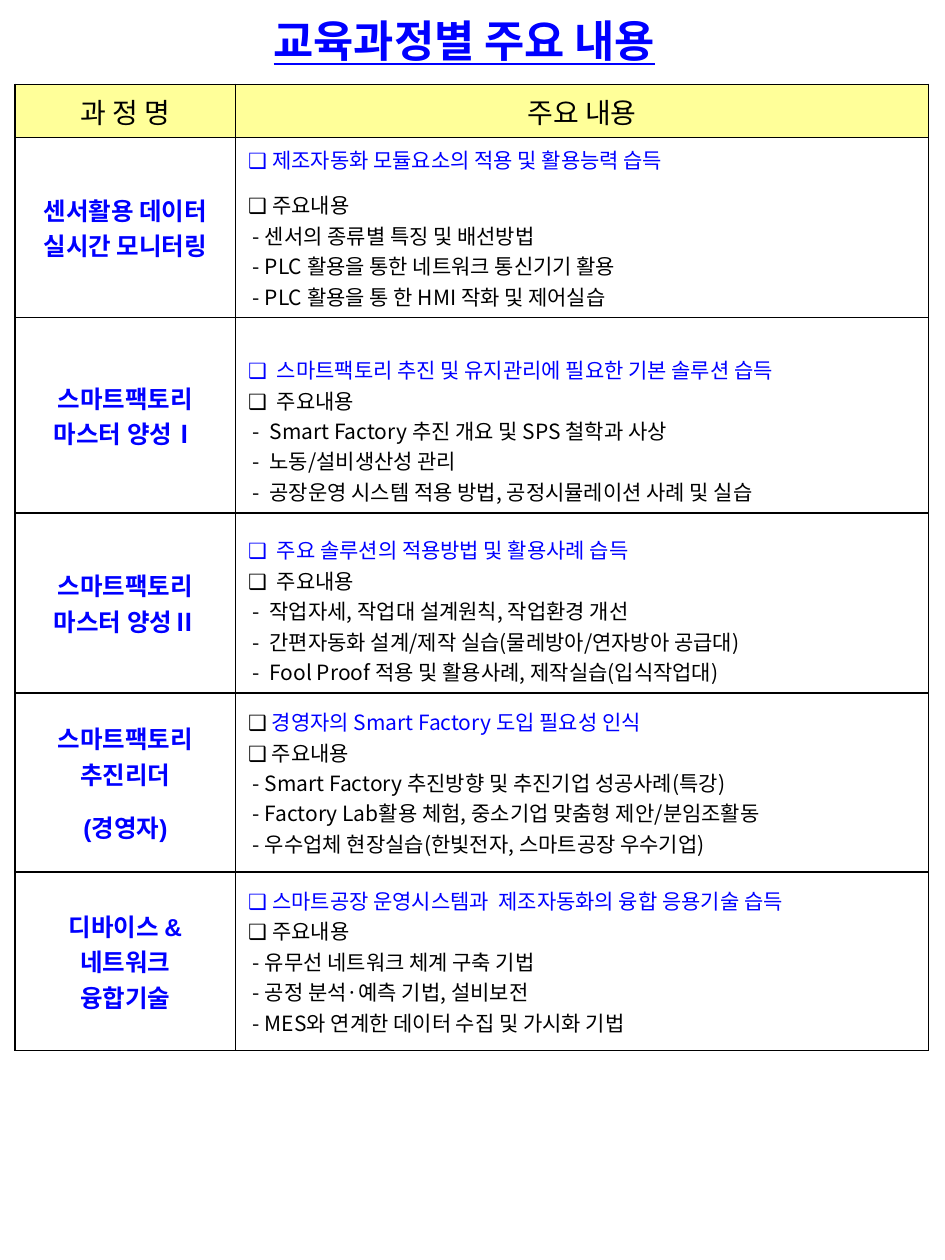
from lxml import etree
from pptx import Presentation
from pptx.dml.color import RGBColor
from pptx.enum.text import MSO_ANCHOR, MSO_AUTO_SIZE, PP_ALIGN
from pptx.oxml.ns import qn
from pptx.util import Inches, Pt

CENTER, LEFT = PP_ALIGN.CENTER, PP_ALIGN.LEFT
TOP, MIDDLE = MSO_ANCHOR.TOP, MSO_ANCHOR.MIDDLE
GROW = MSO_AUTO_SIZE.SHAPE_TO_FIT_TEXT

KOREAN, LATIN = "Noto Sans CJK KR", "Arial"
BLUE, BLACK = "0000FF", "000000"
THEME = {
    "title": {"name": KOREAN, "size": Pt(25), "bold": True, "underline": True, "color": BLUE},
    "header": {"name": KOREAN, "size": Pt(16), "bold": False, "color": BLACK},
    "course": {"size": Pt(14), "bold": True, "color": BLUE},
    "goal": {"name": KOREAN, "size": Pt(12), "bold": False, "color": BLUE},
    "body": {"name": KOREAN, "size": Pt(12), "bold": False, "color": BLACK},
    "header_fill": "FFFF99",
    "border": BLACK,
}

HEADERS = ["과 정 명", "주요 내용"]
CONTENTS = "주요내용"
BOX = "❑"
COURSES = [
    {"name": ["센서활용 데이터", "실시간 모니터링"], "font": LATIN, "height": 1.43,
     "goal": "제조자동화 모듈요소의 적용 및 활용능력 습득", "contents_spacing": 1.5,
     "topics": [" - 센서의 종류별 특징 및 배선방법",
                " - PLC 활용을 통한 네트워크 통신기기 활용",
                " - PLC 활용을 통 한 HMI 작화 및 제어실습"]},
    {"name": ["스마트팩토리", "마스터 양성Ⅰ"], "font": KOREAN, "height": 1.55,
     "goal": " 스마트팩토리 추진 및 유지관리에 필요한 기본 솔루션 습득",
     "goal_spacing": 2.0, "lead": " ",
     "topics": [" -  Smart Factory 추진 개요 및 SPS 철학과 사상",
                " -  노동/설비생산성 관리",
                " -  공장운영 시스템 적용 방법, 공정시뮬레이션 사례 및 실습"]},
    {"name": ["스마트팩토리", "마스터 양성Ⅱ"], "font": KOREAN, "height": 1.43,
     "goal": " 주요 솔루션의 적용방법 및 활용사례 습득",
     "goal_spacing": 1.5, "lead": " ",
     "topics": [" -  작업자세, 작업대 설계원칙, 작업환경 개선",
                " -  간편자동화 설계/제작 실습(물레방아/연자방아 공급대)",
                " -  Fool Proof 적용 및 활용사례, 제작실습(입식작업대)"]},
    {"name": ["스마트팩토리", "추진리더", "(경영자)"], "font": LATIN, "height": 1.42,
     "last_name_spacing": 1.5, "typed_box": True,
     "goal": "경영자의 Smart Factory 도입 필요성 인식",
     "topics": [" - Smart Factory 추진방향 및 추진기업 성공사례(특강)",
                " - Factory Lab활용 체험, 중소기업 맞춤형 제안/분임조활동",
                " - 우수업체 현장실습(한빛전자, 스마트공장 우수기업)"]},
    {"name": ["디바이스 &", "네트워크", "융합기술"], "font": LATIN, "height": 1.42,
     "goal": "스마트공장 운영시스템과  제조자동화의 융합 응용기술 습득",
     "topics": [" - 유무선 네트워크 체계 구축 기법",
                " - 공정 분석·예측 기법, 설비보전",
                " - MES와 연계한 데이터 수집 및 가시화 기법"]},
]
COLUMN_WIDTHS = [1.75, 5.5]
HEADER_HEIGHT = 0.42


def write(frame, lines):
    """Fill a text frame from (runs, align, spacing, bulleted) lines; runs are (text, format)."""
    for index, (runs, align, spacing, bulleted) in enumerate(lines):
        paragraph = frame.paragraphs[0] if index == 0 else frame.add_paragraph()
        paragraph.alignment = align
        if spacing:
            paragraph.line_spacing = spacing
        if bulleted:
            properties = paragraph._p.get_or_add_pPr()
            properties.set("marL", str(Inches(0.19)))
            properties.set("indent", str(Inches(-0.19)))
            etree.SubElement(properties, qn("a:buFont"), typeface=KOREAN)
            etree.SubElement(properties, qn("a:buChar"), char=BOX)
        for text, style in runs:
            run = paragraph.add_run()
            run.text = text
            for key, value in style.items():
                if key == "color":
                    run.font.color.rgb = RGBColor.from_string(value)
                else:
                    setattr(run.font, key, value)
            run_properties = run._r.get_or_add_rPr()
            run_properties.set("kern", "0")
            etree.SubElement(run_properties, qn("a:ea"), typeface=KOREAN)


def add_borders(cell):
    properties = cell._tc.get_or_add_tcPr()
    for side in ("lnL", "lnR", "lnT", "lnB"):
        line = etree.SubElement(properties, qn(f"a:{side}"), w=str(Pt(1)))
        fill = etree.SubElement(line, qn("a:solidFill"))
        etree.SubElement(fill, qn("a:srgbClr"), val=THEME["border"])


prs = Presentation()
prs.slide_width, prs.slide_height = Inches(7.5), Inches(10)
slide = prs.slides.add_slide(prs.slide_layouts[5])

# Title
title = slide.shapes.title
title.left, title.top = Inches(0.36), Inches(0.06)
title.width, title.height = Inches(6.65), Inches(0.52)
title_format = {"word_wrap": True, "auto_size": GROW, "vertical_anchor": TOP}
for key, value in title_format.items():
    setattr(title.text_frame, key, value)
write(title.text_frame, [([("교육과정별 주요 내용", THEME["title"])], CENTER, None, False)])

# Course table
row_heights = [HEADER_HEIGHT] + [course["height"] for course in COURSES]
course_table = slide.shapes.add_table(
    len(row_heights), len(COLUMN_WIDTHS), Inches(0.12), Inches(0.67),
    Inches(sum(COLUMN_WIDTHS)), Inches(sum(row_heights))).table
course_table.first_row = course_table.horz_banding = False
for column, width in zip(course_table.columns, COLUMN_WIDTHS):
    column.width = Inches(width)
for row, height in zip(course_table.rows, row_heights):
    row.height = Inches(height)

for cell in course_table.iter_cells():
    cell.vertical_anchor = MIDDLE
    add_borders(cell)
    cell.fill.background()

for column_index, heading in enumerate(HEADERS):
    cell = course_table.cell(0, column_index)
    cell.fill.solid()
    cell.fill.fore_color.rgb = RGBColor.from_string(THEME["header_fill"])
    write(cell.text_frame, [([(heading, THEME["header"])], CENTER, None, False)])

goal_style, body_style = THEME["goal"], THEME["body"]
for row_index, course in enumerate(COURSES, start=1):
    name_style = {"name": course["font"], **THEME["course"]}
    name_spacings = [None] * (len(course["name"]) - 1) + [course.get("last_name_spacing")]
    write(course_table.cell(row_index, 0).text_frame,
          [([(text, name_style)], CENTER, spacing, False)
           for text, spacing in zip(course["name"], name_spacings)])

    typed_box = course.get("typed_box", False)
    goal_runs = [(course["goal"], goal_style)]
    contents_text = course.get("lead", "") + CONTENTS
    if typed_box:
        goal_runs.insert(0, (f"{BOX} ", body_style))
        contents_text = f"{BOX} {contents_text}"
    details = [
        (goal_runs, LEFT, course.get("goal_spacing"), not typed_box),
        ([(contents_text, body_style)], LEFT, course.get("contents_spacing"), not typed_box),
    ]
    details += [([(topic, body_style)], LEFT, None, False) for topic in course["topics"]]
    write(course_table.cell(row_index, 1).text_frame, details)

prs.save("out.pptx")
